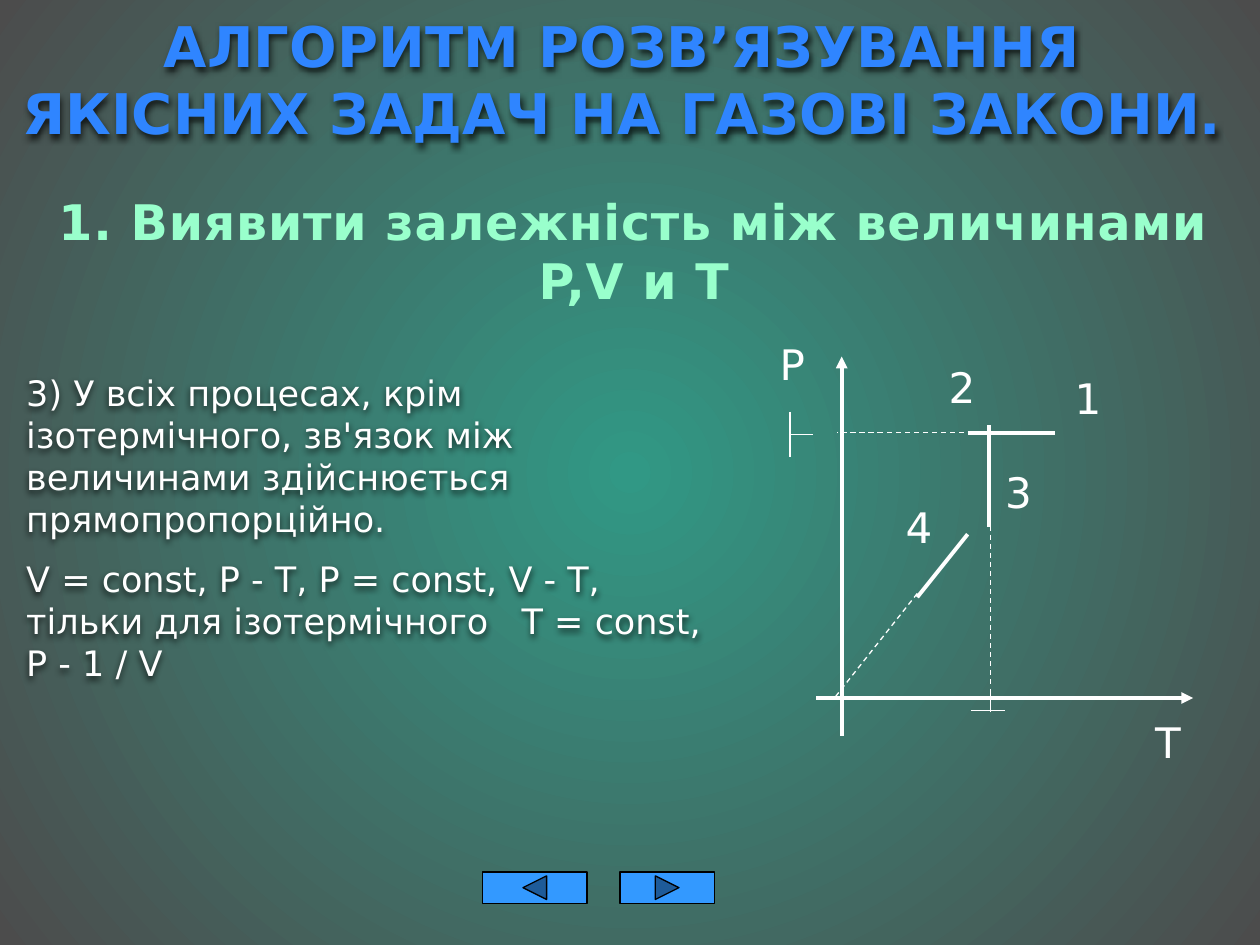
"""Build a physics slide with a P-T diagram of gas processes."""
from dataclasses import dataclass

from lxml import etree
from pptx import Presentation
from pptx.dml.color import RGBColor
from pptx.enum import dml, shapes, text
from pptx.oxml import ns
from pptx.util import Inches, Pt


@dataclass(frozen=True)
class Theme:
    font: str = "DejaVu Sans"
    glow: str = "319885"
    edge: str = "4C4C4C"
    ink: str = "FFFFFF"
    title: str = "2F85FF"
    subtitle: str = "99FFCC"
    button: str = "3399FF"
    outline: str = "000000"
    title_size: int = 32
    subtitle_size: int = 28
    label_size: int = 24
    body_size: int = 20
    thick: float = 2.25
    thin: float = 0.75


THEME = Theme()


def rgb(value):
    return RGBColor.from_string(value)


def sub(parent, tag, **attrs):
    return etree.SubElement(parent, ns.qn(tag), attrs)


def set_background(s):
    fill = s.background.fill
    fill.gradient()
    for stop, color in zip(fill.gradient_stops, (THEME.glow, THEME.edge)):
        stop.color.rgb = rgb(color)
    fill.gradient_stops[0].position = 0
    fill.gradient_stops[1].position = 1
    lin = next(s.element.iter(ns.qn("a:lin")))
    grad = lin.getparent()
    grad.remove(lin)
    circle = sub(grad, "a:path", path="circle")
    sub(circle, "a:fillToRect", l="50000", t="50000", r="50000", b="50000")


def add_text(s, box, paragraphs, size, color, bold=False, centered=False):
    sp = s.shapes.add_textbox(*map(Inches, box))
    tf = sp.text_frame
    tf.word_wrap = True
    tf.auto_size = text.MSO_AUTO_SIZE.SHAPE_TO_FIT_TEXT
    tf.text = "\n".join(paragraphs)
    for p in tf.paragraphs:
        p.space_before = Pt(size / 2)
        p.alignment = text.PP_ALIGN.CENTER if centered else text.PP_ALIGN.LEFT
        p.font.name = THEME.font
        p.font.size = Pt(size)
        p.font.bold = bold
        p.font.color.rgb = rgb(color)
    return sp


def add_shadow(sp):
    effects = sub(sp.element.spPr, "a:effectLst")
    shadow = sub(effects, "a:outerShdw", blurRad="50800", dist="25400", dir="5400000")
    color = sub(shadow, "a:srgbClr", val=THEME.outline)
    sub(color, "a:alpha", val="70000")


def add_line(s, ends, width, dashed=False, arrow=False):
    sp = s.shapes.add_connector(shapes.MSO_CONNECTOR.STRAIGHT, *map(Inches, ends))
    sp.line.color.rgb = rgb(THEME.ink)
    sp.line.width = Pt(width)
    if dashed:
        sp.line.dash_style = dml.MSO_LINE.DASH
    if arrow:
        sub(sp.line._get_or_add_ln(), "a:tailEnd", type="triangle")
    sub(sp.element.spPr, "a:effectLst")


def add_button(s, kind, left, width):
    sp = s.shapes.add_shape(kind, *map(Inches, (left, 6.92, width, 0.25)))
    sp.shadow.inherit = False
    sp.fill.solid()
    sp.fill.fore_color.rgb = rgb(THEME.button)
    sp.line.color.rgb = rgb(THEME.outline)
    sp.line.width = Pt(THEME.thin)


def add_diagram(s):
    axes = ((6.68, 5.84, 6.68, 2.83), (6.48, 5.54, 9.47, 5.54))
    processes = ((7.85, 4.18, 7.85, 3.37), (7.28, 4.74, 7.68, 4.24),
                 (7.68, 3.44, 8.37, 3.44))
    guides = ((7.86, 4.1, 7.86, 5.45), (7.65, 3.43, 6.64, 3.43),
              (7.28, 4.71, 6.63, 5.53))
    ticks = ((7.86, 5.47, 7.86, 5.65), (7.71, 5.64, 7.98, 5.64),
             (6.27, 3.27, 6.27, 3.63), (6.27, 3.45, 6.45, 3.45))
    labels = (("P", 6.09, 2.64, 0.5), ("T", 9.07, 5.64, 0.5), ("1", 8.43, 2.91, 0.6),
              ("2", 7.43, 2.82, 0.6), ("3", 7.88, 3.65, 0.7), ("4", 7.09, 3.93, 0.4))
    for ends in axes:
        add_line(s, ends, THEME.thick, arrow=True)
    for ends in processes:
        add_line(s, ends, THEME.thick)
    for ends in guides:
        add_line(s, ends, THEME.thin, dashed=True)
    for ends in ticks:
        add_line(s, ends, THEME.thin)
    for name, left, top, width in labels:
        add_text(s, (left, top, width, 0.51), [name], THEME.label_size, THEME.ink)


def main():
    prs = Presentation()
    prs.slide_width, prs.slide_height = Inches(10), Inches(7.5)
    s = prs.slides.add_slide(prs.slide_layouts[6])
    set_background(s)
    body = add_text(s, (0.11, 2.9, 5.75, 2.63), [
        "3) У всіх процесах, крім ізотермічного, зв'язок між величинами "
        "здійснюється прямопропорційно.",
        "V = const, P - T, P = const, V - T, тільки для ізотермічного   "
        "T = const, P - 1 / V",
    ], THEME.body_size, THEME.ink)
    add_shadow(body)
    add_diagram(s)
    add_button(s, shapes.MSO_SHAPE.ACTION_BUTTON_BACK_OR_PREVIOUS, 3.83, 0.83)
    add_button(s, shapes.MSO_SHAPE.ACTION_BUTTON_FORWARD_OR_NEXT, 4.92, 0.75)
    title = add_text(s, (0, 0.04, 9.88, 1.18),
                     ["АЛГОРИТМ РОЗВ’ЯЗУВАННЯ ЯКІСНИХ ЗАДАЧ НА ГАЗОВІ ЗАКОНИ."],
                     THEME.title_size, THEME.title, bold=True, centered=True)
    add_shadow(title)
    subtitle = add_text(s, (0.03, 1.47, 10, 1.04),
                        ["1. Виявити залежність між величинами P,V и T"],
                        THEME.subtitle_size, THEME.subtitle, bold=True, centered=True)
    for r in subtitle.text_frame.paragraphs[0].runs:
        r.font._element.set("spc", "50")
    prs.save("out.pptx")


if __name__ == "__main__":
    main()
